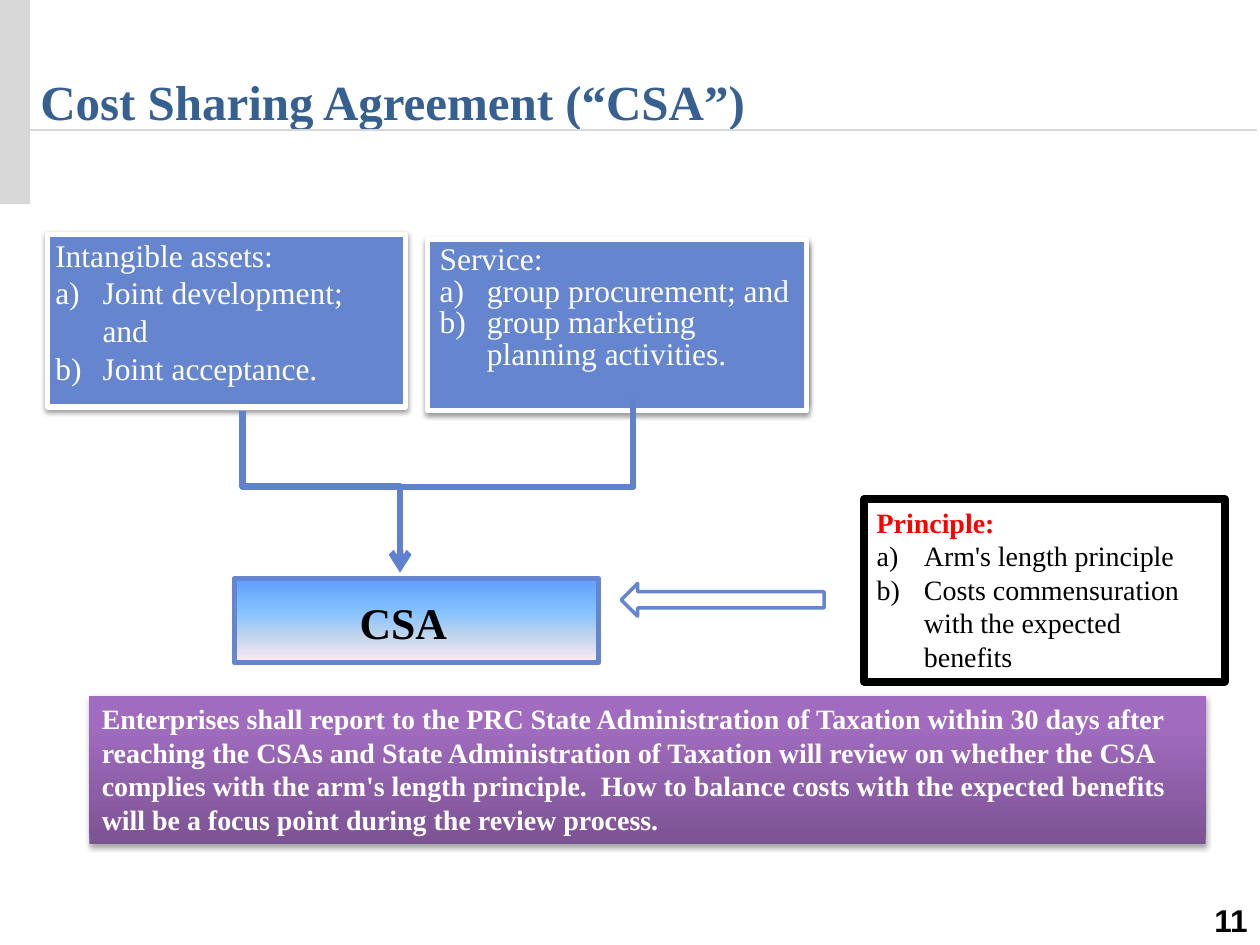
from lxml import etree
from pptx import Presentation
from pptx.dml.color import RGBColor
from pptx.enum.shapes import MSO_CONNECTOR, MSO_SHAPE
from pptx.enum.text import MSO_ANCHOR, MSO_AUTO_SIZE, PP_ALIGN
from pptx.oxml.ns import qn
from pptx.util import Inches, Pt

RECTANGLE, RIGHT_ARROW = MSO_SHAPE.RECTANGLE, MSO_SHAPE.RIGHT_ARROW
ELBOW, STRAIGHT = MSO_CONNECTOR.ELBOW, MSO_CONNECTOR.STRAIGHT
LEFT, CENTER, RIGHT = PP_ALIGN.LEFT, PP_ALIGN.CENTER, PP_ALIGN.RIGHT
TOP, MIDDLE = MSO_ANCHOR.TOP, MSO_ANCHOR.MIDDLE

COLORS = {
    "title": "376092", "rule": "D8D8D8", "box": "6585CF", "connector": "6081CD",
    "white": "FFFFFF", "black": "000000", "red": "FF0000", "backing": "7A66C7",
}
SERIF = "Times New Roman"

# Content
TITLE = "Cost Sharing Agreement (“CSA”)"
INTANGIBLES = ["Intangible assets:", "Joint development; and", "Joint acceptance."]
SERVICES = ["Service:", "group procurement; and", "group marketing planning activities."]
PRINCIPLES = ["Principle:", "Arm's length principle",
              "Costs commensuration with the expected benefits"]
REPORTING = ("Enterprises shall report to the PRC State Administration of Taxation within "
             "30 days after reaching the CSAs and State Administration of Taxation will "
             "review on whether the CSA complies with the arm's length principle.  How to "
             "balance costs with the expected benefits will be a focus point during the "
             "review process.")
PAGE_NUMBER = "11"

# Gradients: (position in percent, colour), and whether they run upwards
BACKING_GRADIENT = [(0, "5845A1"), (80, "725AD0"), (100, "7158D4")]
CSA_GRADIENT = [(0, "5E9EFF"), (40, "85C2FF"), (70, "C4D6EB"), (100, "FFEBFA")]
REPORT_GRADIENT = [(0, "7C5393"), (80, "A16CBF"), (100, "A26BC1")]


def color(name):
    return RGBColor.from_string(COLORS[name])


def add_element(parent, tag, **attributes):
    element = etree.SubElement(parent, qn(tag))
    for key, value in attributes.items():
        element.set(key, str(value))
    return element


def write(shape, text, size=18, name="black", font=SERIF, bold=False, align=LEFT,
          anchor=TOP, spacing=None, heading=None):
    """Write a string, or a heading followed by lettered items."""
    frame = shape.text_frame
    frame.word_wrap = True
    frame.auto_size = MSO_AUTO_SIZE.NONE
    frame.vertical_anchor = anchor
    lines = [text] if isinstance(text, str) else text
    for index, line in enumerate(lines):
        paragraph = frame.paragraphs[0] if index == 0 else frame.add_paragraph()
        paragraph.alignment = align
        if spacing:
            paragraph.line_spacing = Pt(spacing)
        if index:
            properties = paragraph._p.get_or_add_pPr()
            properties.set("marL", str(Inches(0.375)))
            properties.set("indent", str(-Inches(0.375)))
            add_element(properties, "a:buAutoNum", type="alphaLcParenR")
        is_heading = heading is not None and index == 0
        run = paragraph.add_run()
        run.text = line
        run.font.name, run.font.size = font, Pt(size)
        run.font.bold = bold or is_heading
        run.font.color.rgb = color(heading if is_heading else name)


def add_box(slide, place, fill=None, line=None, width=1, gradient=None, upward=False,
            shadow=None, kind=RECTANGLE):
    shape = slide.shapes.add_shape(kind, *map(Inches, place))
    shape.shadow.inherit = False
    properties = shape._element.spPr
    if gradient:
        shape.fill.gradient()
        shape.fill.gradient_angle = 90 if upward else 270
        stops = properties.find(".//" + qn("a:gsLst"))
        for stop in list(stops):
            stops.remove(stop)
        for position, value in gradient:
            stop = add_element(stops, "a:gs", pos=position * 1000)
            add_element(stop, "a:srgbClr", val=value)
    elif fill:
        shape.fill.solid()
        shape.fill.fore_color.rgb = color(fill)
    else:
        shape.fill.background()
    if line:
        shape.line.color.rgb = color(line)
        shape.line.width = Pt(width)
    else:
        shape.line.fill.background()
    if shadow:
        opacity, distance = shadow
        outer = add_element(properties.find(qn("a:effectLst")), "a:outerShdw",
                            blurRad=Pt(3.1), dist=Pt(distance), dir=90 * 60000,
                            rotWithShape=0)
        shade = add_element(outer, "a:srgbClr", val=COLORS["black"])
        add_element(shade, "a:alpha", val=opacity * 1000)
    return shape


def add_text_box(slide, place, text, **style):
    write(slide.shapes.add_textbox(*map(Inches, place)), text, **style)


def add_line(slide, place, name, width, kind=STRAIGHT, turn=0, flip=False, preset=None,
             adjustment=None, arrow=False):
    """Place is the box before it is turned."""
    left, top, across, down = place
    ends = map(Inches, (left, top, left + across, top + down))
    connector = slide.shapes.add_connector(kind, *ends)
    connector.line.color.rgb = color(name)
    connector.line.width = Pt(width)
    properties = connector._element.spPr
    transform = properties.find(qn("a:xfrm"))
    if turn:
        transform.set("rot", str(turn * 60000))
    if flip:
        transform.set("flipH", "1")
    geometry = properties.find(qn("a:prstGeom"))
    if preset:
        geometry.set("prst", preset)
    if adjustment:
        add_element(geometry.find(qn("a:avLst")), "a:gd", name="adj1",
                    fmla=f"val {round(adjustment * 100000)}")
    if arrow:
        add_element(properties.find(qn("a:ln")), "a:tailEnd", type="arrow")
    add_element(properties, "a:effectLst")


def main():
    presentation = Presentation()
    presentation.slide_width, presentation.slide_height = Inches(10), Inches(7.5)
    slide = presentation.slides.add_slide(presentation.slide_layouts[5])

    # Title with its rule and side bar
    add_line(slide, (0.04, 1.03, 9.94, 0), "rule", 1)
    add_box(slide, (0, 0, 0.24, 1.62), fill="rule")
    title = slide.shapes.title
    title.left, title.top, title.width, title.height = map(Inches, (0.22, 0, 8.5, 1.61))
    write(title, TITLE, size=28, name="title", bold=True, anchor=MIDDLE)

    # Principle
    principle = add_box(slide, (6.86, 3.96, 2.86, 1.45), line="black", width=4.5)
    write(principle, PRINCIPLES, size=16, heading="red")

    # Intangible assets and services
    card = {"fill": "box", "line": "white", "width": 3, "shadow": (38, 1.6)}
    add_box(slide, (0.38, 1.86, 2.84, 1.37), **card)
    add_text_box(slide, (0.34, 1.82, 2.72, 1.31), INTANGIBLES, name="white")
    add_box(slide, (3.41, 1.93, 3.01, 1.27), gradient=BACKING_GRADIENT, upward=True,
            line="backing", width=0.75, shadow=(35, 1.8))
    service = add_box(slide, (3.39, 1.9, 3.01, 1.36), **card)
    write(service, SERVICES, name="white", spacing=18)

    # Both lead to the agreement
    add_line(slide, (3.68, 2.52, 0.7, 1.99), "connector", 3.75, kind=ELBOW, turn=90,
             preset="bentConnector2")
    add_line(slide, (1.91, 3.28, 1.28, 1.25), "connector", 3.75, kind=ELBOW, turn=270,
             flip=True, adjustment=0.466, arrow=True)
    add_box(slide, (1.86, 4.59, 2.89, 0.67), gradient=CSA_GRADIENT, line="box", width=3)
    add_text_box(slide, (1.94, 4.68, 2.52, 0.52), "CSA", size=25, bold=True, align=CENTER)
    arrow = add_box(slide, (4.93, 4.63, 1.61, 0.26), fill="white", line="box", width=2,
                    kind=RIGHT_ARROW)
    arrow.rotation = 180

    # Reporting duty and page number
    report = add_box(slide, (0.71, 5.52, 8.86, 1.18), gradient=REPORT_GRADIENT,
                     upward=True, shadow=(35, 1.8))
    write(report, REPORTING, size=16, name="white", bold=True)
    add_text_box(slide, (8.32, 7.1, 1.68, 0.4), PAGE_NUMBER, font="Arial", bold=True,
                 align=RIGHT)

    presentation.save("out.pptx")


if __name__ == "__main__":
    main()
